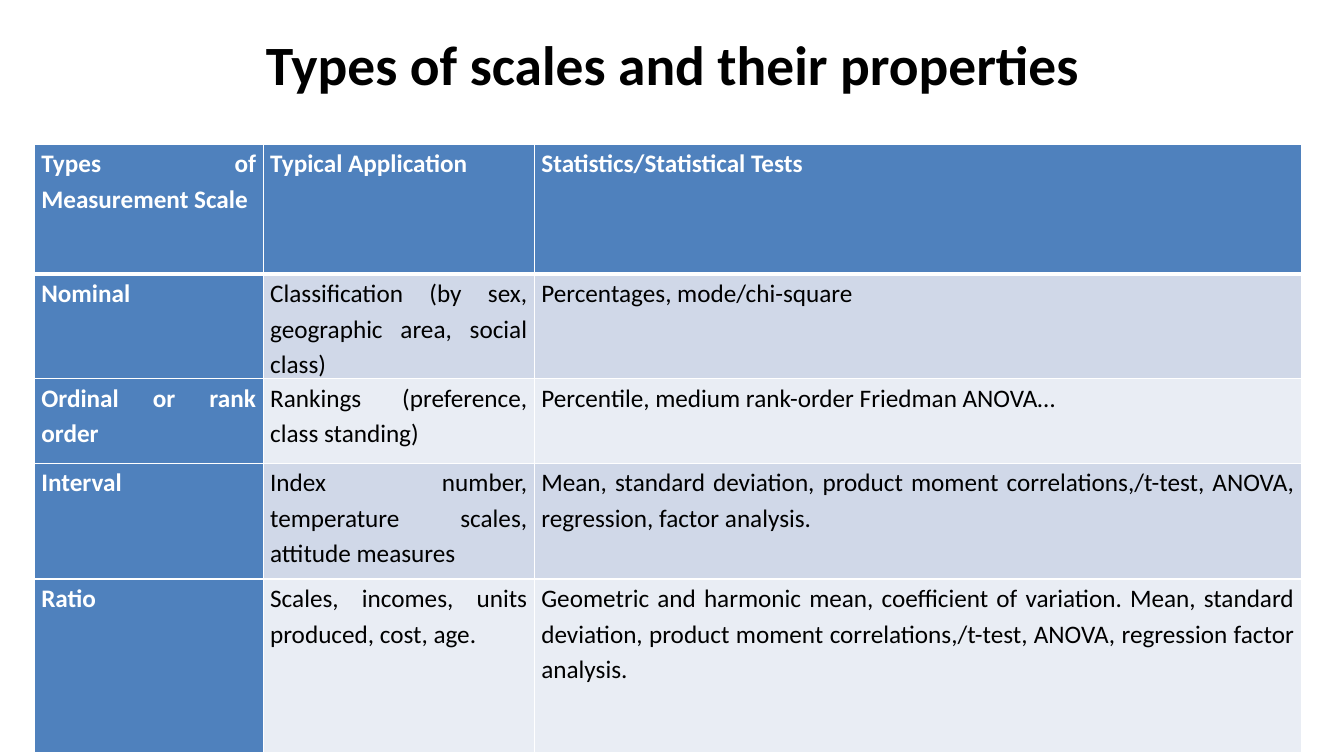
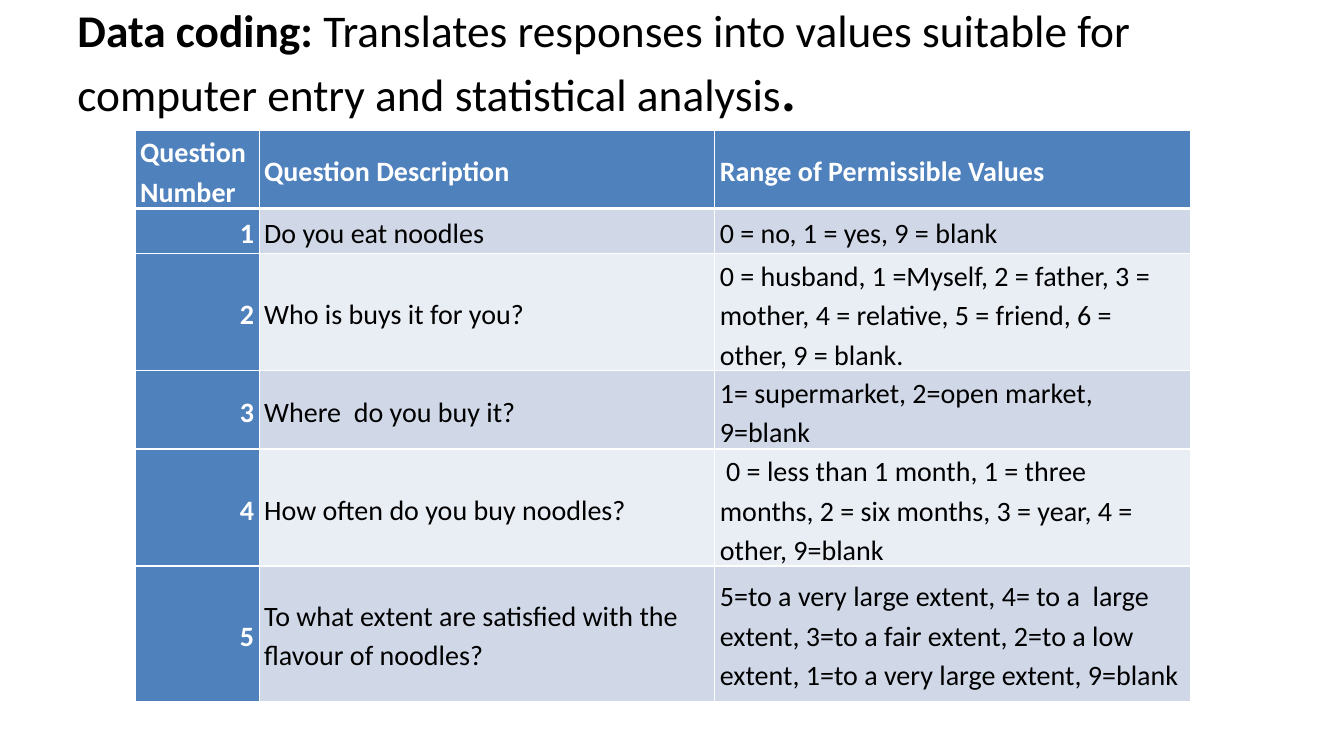
import enum
import lxml.etree
import pptx
import pptx.dml.color
import pptx.enum.text
import pptx.oxml.ns
import pptx.util

Inches = pptx.util.Inches
Align = pptx.enum.text.PP_ALIGN
Anchor = pptx.enum.text.MSO_ANCHOR


class Theme:
    font = "Calibri"
    white = "FFFFFF"
    black = "000000"
    accent = "4F81BD"
    bands = ("D0D8E8", "E9EDF4")
    title_size = 39.6
    lead_size = 32.4
    line_spacing = 1.15
    thin = 1
    thick = 3


def write_text(frame, runs, color=Theme.black, align=Align.LEFT, spacing=1.0,
               after=0, margins=(0.1, 0, 0.1, 0)):
    frame.word_wrap = True
    (frame.margin_left, frame.margin_top,
     frame.margin_right, frame.margin_bottom) = map(Inches, margins)
    body = getattr(frame, "text_frame", frame)
    paragraph = body.paragraphs[0]
    paragraph.alignment = align
    paragraph.line_spacing = spacing
    paragraph.space_after = pptx.util.Pt(after)
    for words, size, bold in runs:
        run = paragraph.add_run()
        run.text = words
        run.font.name = Theme.font
        run.font.size = pptx.util.Pt(size)
        run.font.bold = bold
        run.font.color.rgb = pptx.dml.color.RGBColor.from_string(color)


def draw_borders(cell, top, bottom):
    qn = pptx.oxml.ns.qn
    properties = cell._tc.get_or_add_tcPr()
    widths = {"lnL": Theme.thin, "lnR": Theme.thin, "lnT": top, "lnB": bottom}
    for position, (side, width) in enumerate(widths.items()):
        line = lxml.etree.Element(qn("a:" + side), w=str(pptx.util.Pt(width)))
        fill = lxml.etree.SubElement(line, qn("a:solidFill"))
        lxml.etree.SubElement(fill, qn("a:srgbClr"), val=Theme.white)
        properties.insert(position, line)


slides = [
    {
        "title": [("Types of scales and their properties", Theme.title_size, True)],
        "title_top": 0.3,
        "title_align": Align.CENTER,
        "corner": (0.34, 1.43),
        "columns": [2.27, 2.69, 7.61],
        "heights": [1.29, 0.86, 0.84, 1.15, 1.72],
        "size": 18,
        "align": Align.JUSTIFY,
        "key_align": Align.JUSTIFY,
        "anchor": Anchor.TOP,
        "after": 10,
        "margins": (0.07, 0, 0.07, 0),
        "rows": [
            ["Types of Measurement Scale", "Typical Application",
             "Statistics/Statistical Tests"],
            ["Nominal", "Classification (by sex, geographic area, social class)",
             "Percentages, mode/chi-square"],
            ["Ordinal or rank order", "Rankings (preference, class standing)",
             "Percentile, medium rank-order Friedman ANOVA…"],
            ["Interval", "Index number, temperature scales, attitude measures",
             "Mean, standard deviation, product moment correlations,/t-test, "
             "ANOVA, regression, factor analysis."],
            ["Ratio", "Scales, incomes, units produced, cost, age.",
             "Geometric and harmonic mean, coefficient of variation. Mean, "
             "standard deviation, product moment correlations,/t-test, ANOVA, "
             "regression factor analysis."],
        ],
    },
    {
        "title": [
            ("Data coding:", Theme.lead_size, True),
            (" Translates responses into values suitable for computer entry "
             "and statistical analysis", Theme.lead_size, False),
            (".", Theme.title_size, True),
        ],
        "title_top": 0.02,
        "title_align": Align.LEFT,
        "corner": (1.34, 1.29),
        "columns": [1.23, 4.52, 4.72],
        "heights": [0.71, 0.45, 0.89, 0.67, 0.89, 1.34],
        "size": 20,
        "align": Align.LEFT,
        "key_align": Align.RIGHT,
        "anchor": Anchor.MIDDLE,
        "after": 0,
        "margins": (0.05, 0.01, 0.05, 0),
        "rows": [
            ["Question Number", "Question Description", "Range of Permissible Values"],
            ["1", "Do you eat noodles", "0 = no, 1 = yes, 9 = blank"],
            ["2", "Who is buys it for you?",
             "0 = husband, 1 =Myself, 2 = father, 3 = mother, 4 = relative, "
             "5 = friend, 6 = other, 9 = blank."],
            ["3", "Where  do you buy it?", "1= supermarket, 2=open market, 9=blank"],
            ["4", "How often do you buy noodles?",
             " 0 = less than 1 month, 1 = three months, 2 = six months, "
             "3 = year, 4 = other, 9=blank"],
            ["5", "To what extent are satisfied with the flavour of noodles?",
             "5=to a very large extent, 4= to a  large extent, 3=to a fair extent, "
             "2=to a low extent, 1=to a very large extent, 9=blank"],
        ],
    },
]

deck = pptx.Presentation()
deck.slide_width = Inches(13.33)
deck.slide_height = Inches(7.5)

for content in slides:
    slide = deck.slides.add_slide(deck.slide_layouts[6])

    title = slide.shapes.add_textbox(
        Inches(0.67), Inches(content["title_top"]), Inches(12), Inches(1.25))
    write_text(title.text_frame, content["title"], align=content["title_align"])

    left, top = content["corner"]
    columns, heights, rows = content["columns"], content["heights"], content["rows"]
    table = slide.shapes.add_table(
        len(rows), len(columns), Inches(left), Inches(top),
        Inches(sum(columns)), Inches(sum(heights))).table
    for column, width in zip(table.columns, columns):
        column.width = Inches(width)

    for r, entries in enumerate(rows):
        table.rows[r].height = Inches(heights[r])
        for c, words in enumerate(entries):
            cell = table.cell(r, c)
            is_header = r == 0
            is_label = is_header or c == 0
            is_key = c == 0 and not is_header
            cell.vertical_anchor = content["anchor"]
            cell.fill.solid()
            cell.fill.fore_color.rgb = pptx.dml.color.RGBColor.from_string(
                Theme.accent if is_label else Theme.bands[(r - 1) % 2])
            write_text(
                cell, [(words, content["size"], is_label)],
                color=Theme.white if is_label else Theme.black,
                align=content["key_align" if is_key else "align"],
                spacing=Theme.line_spacing, after=content["after"],
                margins=content["margins"])
            draw_borders(
                cell,
                top=Theme.thick if r == 1 else Theme.thin,
                bottom=Theme.thick if is_header else Theme.thin)

deck.save("out.pptx")
